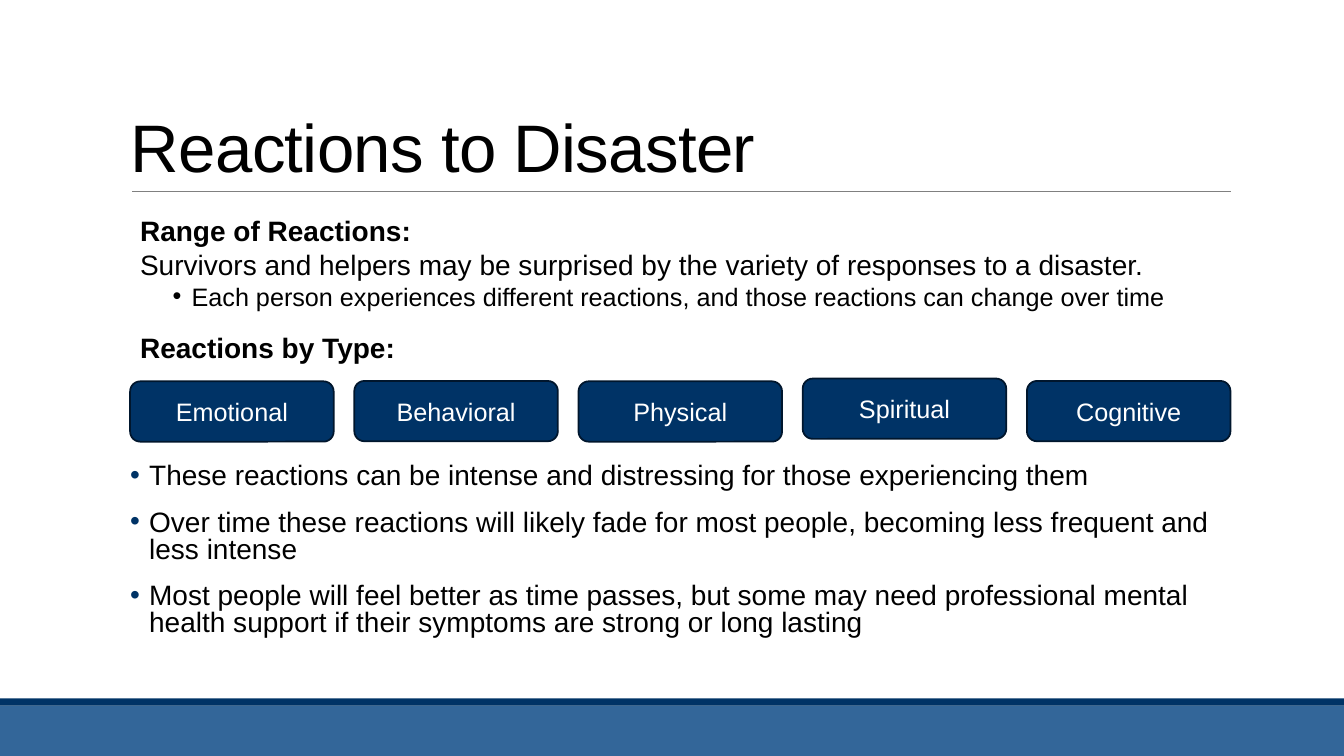
import pptx
import pptx.dml.color
import pptx.enum.shapes
import pptx.enum.text
import pptx.oxml.ns
import pptx.util
from lxml import etree
from pptx.util import Cm, Pt

RGBColor = pptx.dml.color.RGBColor
BLACK = RGBColor(0x00, 0x00, 0x00)
WHITE = RGBColor(0xFF, 0xFF, 0xFF)
GREY = RGBColor(0x80, 0x80, 0x80)
NAVY = RGBColor(0x00, 0x33, 0x66)
DARK_NAVY = RGBColor(0x00, 0x16, 0x2D)
BLUE = RGBColor(0x33, 0x66, 0x99)

MSO_SHAPE = pptx.enum.shapes.MSO_SHAPE
MSO_ANCHOR = pptx.enum.text.MSO_ANCHOR
PP_ALIGN = pptx.enum.text.PP_ALIGN

# Reaction type and top edge in centimetres
REACTION_TYPES = [
    ("Emotional", 9.61),
    ("Behavioral", 9.6),
    ("Physical", 9.61),
    ("Spiritual", 9.54),
    ("Cognitive", 9.6),
]
OUTLOOK = [
    "These reactions can be intense and distressing for those experiencing them",
    "Over time these reactions will likely fade for most people, "
    "becoming less frequent and less intense",
    "Most people will feel better as time passes, but some may need professional "
    "mental health support if their symptoms are strong or long lasting",
]


def add_run(p, text, size, color=BLACK, bold=False):
    r = p.add_run()
    r.text = text
    r.font.name = "Arial"
    r.font.size = Pt(size)
    r.font.bold = bold
    r.font.color.rgb = color
    return r


def add_bullet(p, left, hanging, color):
    pPr = p._p.get_or_add_pPr()
    pPr.set("marL", str(Cm(left)))
    pPr.set("indent", str(-Cm(hanging)))
    qn = pptx.oxml.ns.qn
    clr = etree.SubElement(pPr, qn("a:buClr"))
    etree.SubElement(clr, qn("a:srgbClr")).set("val", str(color))
    etree.SubElement(pPr, qn("a:buFont")).set("typeface", "Arial")
    etree.SubElement(pPr, qn("a:buChar")).set("char", "•")


def add_text_box(s, left, top, width, height):
    tf = s.shapes.add_textbox(Cm(left), Cm(top), Cm(width), Cm(height)).text_frame
    tf.word_wrap = True
    return tf


def add_block(s, kind, left, top, width, height, fill):
    sp = s.shapes.add_shape(kind, Cm(left), Cm(top), Cm(width), Cm(height))
    sp.shadow.inherit = False
    sp.fill.solid()
    sp.fill.fore_color.rgb = fill
    sp.line.fill.background()
    return sp


def add_rule(s, left, right, y):
    line = s.shapes.add_connector(
        pptx.enum.shapes.MSO_CONNECTOR.STRAIGHT, Cm(left), Cm(y), Cm(right), Cm(y))
    line.line.color.rgb = GREY
    line.line.width = Pt(0.5)
    etree.SubElement(line._element.spPr, pptx.oxml.ns.qn("a:effectLst"))


def add_title(s, text):
    tf = add_text_box(s, 3.05, 0.79, 27.94, 4.04)
    tf.vertical_anchor = MSO_ANCHOR.BOTTOM
    p = tf.paragraphs[0]
    p.line_spacing = 0.85
    r = add_run(p, text, 48)
    r._r.get_or_add_rPr().set("spc", "-50")


def add_range_text(s):
    tf = add_text_box(s, 3.28, 5.26, 27.71, 4.11)
    add_run(tf.paragraphs[0], "Range of Reactions:", 20, bold=True)
    add_run(tf.add_paragraph(),
            "Survivors and helpers may be surprised by the variety of responses "
            "to a disaster.", 20)
    p = tf.add_paragraph()
    add_bullet(p, 1.3, 0.48, BLACK)
    add_run(p, "Each person experiences different reactions, and those reactions "
               "can change over time", 18)
    p = tf.add_paragraph()
    p.space_before = Pt(14)
    add_run(p, "Reactions by Type:", 20, bold=True)


def add_reaction_button(s, left, top, label):
    sp = add_block(s, MSO_SHAPE.ROUNDED_RECTANGLE, left, top, 5.13, 1.52, NAVY)
    sp.line.color.rgb = DARK_NAVY
    sp.line.width = Pt(1.25)
    tf = sp.text_frame
    tf.vertical_anchor = MSO_ANCHOR.MIDDLE
    p = tf.paragraphs[0]
    p.alignment = PP_ALIGN.CENTER
    add_run(p, label, 18, WHITE)


def add_outlook_list(s):
    tf = add_text_box(s, 3.28, 11.58, 27.94, 4.88)
    tf.margin_left = tf.margin_right = 0
    for i, text in enumerate(OUTLOOK):
        p = tf.add_paragraph() if i else tf.paragraphs[0]
        add_bullet(p, 0.48, 0.48, NAVY)
        p.line_spacing = 0.8
        p.space_before = Pt(12 if i else 0)
        p.space_after = Pt(2)
        add_run(p, text, 20)


def main():
    prs = pptx.Presentation()
    prs.slide_width, prs.slide_height = Cm(33.87), Cm(19.05)
    s = prs.slides.add_slide(prs.slide_layouts[6])
    add_block(s, MSO_SHAPE.RECTANGLE, 0, 17.78, 33.87, 1.27, BLUE)
    add_block(s, MSO_SHAPE.RECTANGLE, 0, 17.6, 33.87, 0.18, NAVY)
    add_rule(s, 3.33, 31.01, 4.83)
    add_title(s, "Reactions to Disaster")
    add_outlook_list(s)
    for i, (label, top) in enumerate(REACTION_TYPES):
        add_reaction_button(s, 3.28 + i * 5.65, top, label)
    add_range_text(s)
    prs.save("out.pptx")


if __name__ == "__main__":
    main()
